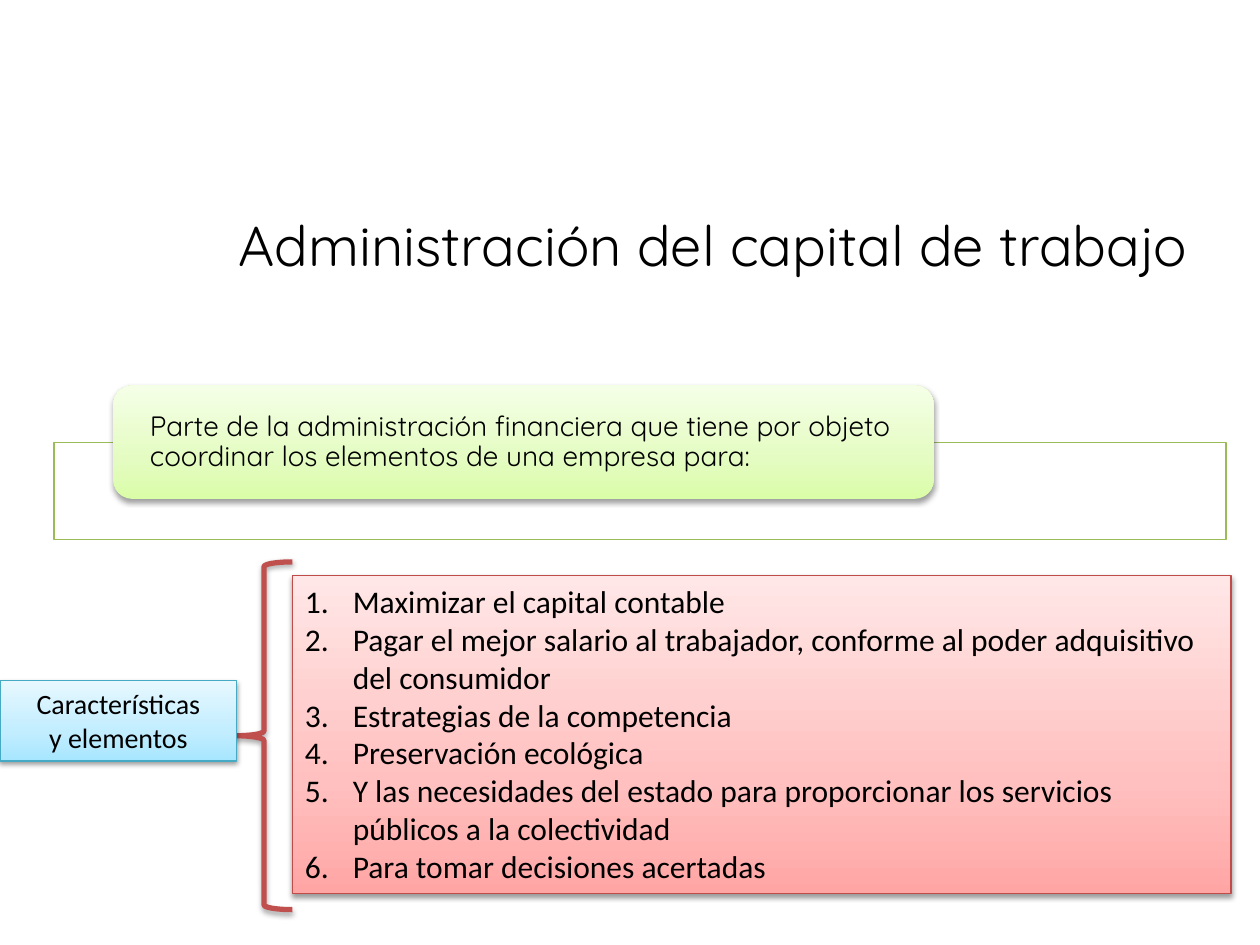
import pptx
import pptx.util
import pptx.dml.color
import pptx.enum.shapes
import pptx.enum.text
import pptx.oxml
import pptx.oxml.ns
from lxml import etree

Inches = pptx.util.Inches
Pt = pptx.util.Pt
qn = pptx.oxml.ns.qn
KIND = pptx.enum.shapes.MSO_SHAPE
ALIGN = pptx.enum.text.PP_ALIGN
ANCHOR = pptx.enum.text.MSO_ANCHOR

COLORS = {
    "text": "000000",
    "paper": "FFFFFF",
    "frame": "9BBB59",
    "brace": "C0504D",
    "red": "BF4C48",
    "blue": "46AAC5",
}
FADES = {
    "green": ("DAFDA7", "E4FCC2", "F5FFE7"),
    "red": ("FFA6A5", "FFC0BF", "FFE7E7"),
    "blue": ("A7E6FF", "C1EDFF", "E7F8FF"),
}
STOPS = (0, 35, 100)
GOALS = (
    "Maximizar el capital contable",
    "Pagar el mejor salario al trabajador, conforme al poder adquisitivo del consumidor",
    "Estrategias de la competencia",
    "Preservación ecológica",
    "Y las necesidades del estado para proporcionar los servicios públicos a la colectividad",
    "Para tomar decisiones acertadas",
)


def rgb(name):
    return pptx.dml.color.RGBColor.from_string(COLORS[name])


def place(shape, box):
    shape.left, shape.top, shape.width, shape.height = map(Inches, box)


def add_shape(slide, kind, box):
    shape = slide.shapes.add_shape(kind, *map(Inches, box))
    shape.shadow.inherit = False
    return shape


def set_line(shape, color, width):
    shape.line.color.rgb = rgb(color)
    shape.line.width = Pt(width)


def set_fade(shape, name):
    shape.fill.gradient()
    shape.fill.gradient_angle = 90
    stops = shape._element.spPr.find(".//" + qn("a:gsLst"))
    for old in list(stops):
        stops.remove(old)
    for pos, color in zip(STOPS, FADES[name]):
        stop = etree.SubElement(stops, qn("a:gs"), pos=str(pos * 1000))
        etree.SubElement(stop, qn("a:srgbClr"), val=color)


def set_shade(shape, alpha, dist):
    shape.shadow.inherit = False
    group = shape._element.spPr.find(qn("a:effectLst"))
    shade = etree.SubElement(
        group, qn("a:outerShdw"), blurRad=str(Pt(3.1)), dist=str(Pt(dist)),
        dir="5400000", rotWithShape="0")
    color = etree.SubElement(shade, qn("a:srgbClr"), val=COLORS["text"])
    etree.SubElement(color, qn("a:alpha"), val=str(alpha * 1000))


def set_text(shape, lines, size, font, align=ALIGN.LEFT, anchor=ANCHOR.TOP,
             number=False):
    frame = shape.text_frame
    frame.word_wrap = True
    frame.auto_size = pptx.enum.text.MSO_AUTO_SIZE.NONE
    frame.vertical_anchor = anchor
    for i, line in enumerate(lines):
        para = frame.add_paragraph() if i else frame.paragraphs[0]
        if number:
            props = para._p.get_or_add_pPr()
            props.set("marL", str(Inches(0.38)))
            props.set("indent", str(-Inches(0.38)))
            etree.SubElement(props, qn("a:buAutoNum"), type="arabicPeriod")
        para.alignment = align
        para.space_before = Pt(0)
        run = para.add_run()
        run.text = line
        run.font.size = Pt(size)
        run.font.name = font
        run.font.color.rgb = rgb("text")
    return frame


def add_title(slide):
    title = slide.shapes.title
    place(title, (1.54, 1.62, 8.24, 1.18))
    set_text(title, ["Administración del capital de trabajo"], 32, "Quicksand",
             ALIGN.CENTER)


def add_intro(slide):
    frame = add_shape(slide, KIND.RECTANGLE, (0.43, 3.51, 9.3, 0.77))
    frame.fill.solid()
    frame.fill.fore_color.rgb = rgb("paper")
    set_line(frame, "frame", 0.75)
    card = add_shape(slide, KIND.ROUNDED_RECTANGLE, (0.9, 3.06, 6.51, 0.9))
    set_fade(card, "green")
    card.line.fill.background()
    set_shade(card, 38, 1.6)
    label = slide.shapes.add_textbox(*map(Inches, (0.94, 3.1, 6.42, 0.82)))
    text = set_text(
        label,
        ["Parte de la administración financiera que tiene por objeto "
         "coordinar los elementos de una empresa para:"],
        16, "Quicksand", anchor=ANCHOR.MIDDLE)
    text.margin_left = text.margin_right = Inches(0.25)
    text.margin_top = text.margin_bottom = 0
    text.paragraphs[0].line_spacing = 0.9


def add_panel(shape, color):
    set_fade(shape, color)
    set_line(shape, color, 0.75)
    set_shade(shape, 38, 1.6)


def add_goals(slide):
    body = slide.placeholders[1]
    place(body, (2.32, 4.57, 7.45, 2.52))
    add_panel(body, "red")
    set_text(body, GOALS, 18, "Calibri", number=True)


def add_brace(slide):
    brace = add_shape(slide, KIND.LEFT_BRACE, (1.87, 4.46, 0.45, 2.76))
    brace.fill.background()
    set_line(brace, "brace", 3)
    set_shade(brace, 35, 1.8)


def add_label(slide):
    label = add_shape(slide, KIND.RECTANGLE, (0, 5.4, 1.88, 0.64))
    add_panel(label, "blue")
    set_text(label, ["Características", "y elementos"], 16, "Calibri",
             ALIGN.CENTER)


def main():
    deck = pptx.Presentation()
    deck.slide_width, deck.slide_height = Inches(10), Inches(7.5)
    slide = deck.slides.add_slide(deck.slide_layouts[1])
    add_title(slide)
    add_intro(slide)
    add_goals(slide)
    add_brace(slide)
    add_label(slide)
    deck.save("out.pptx")


if __name__ == "__main__":
    main()
